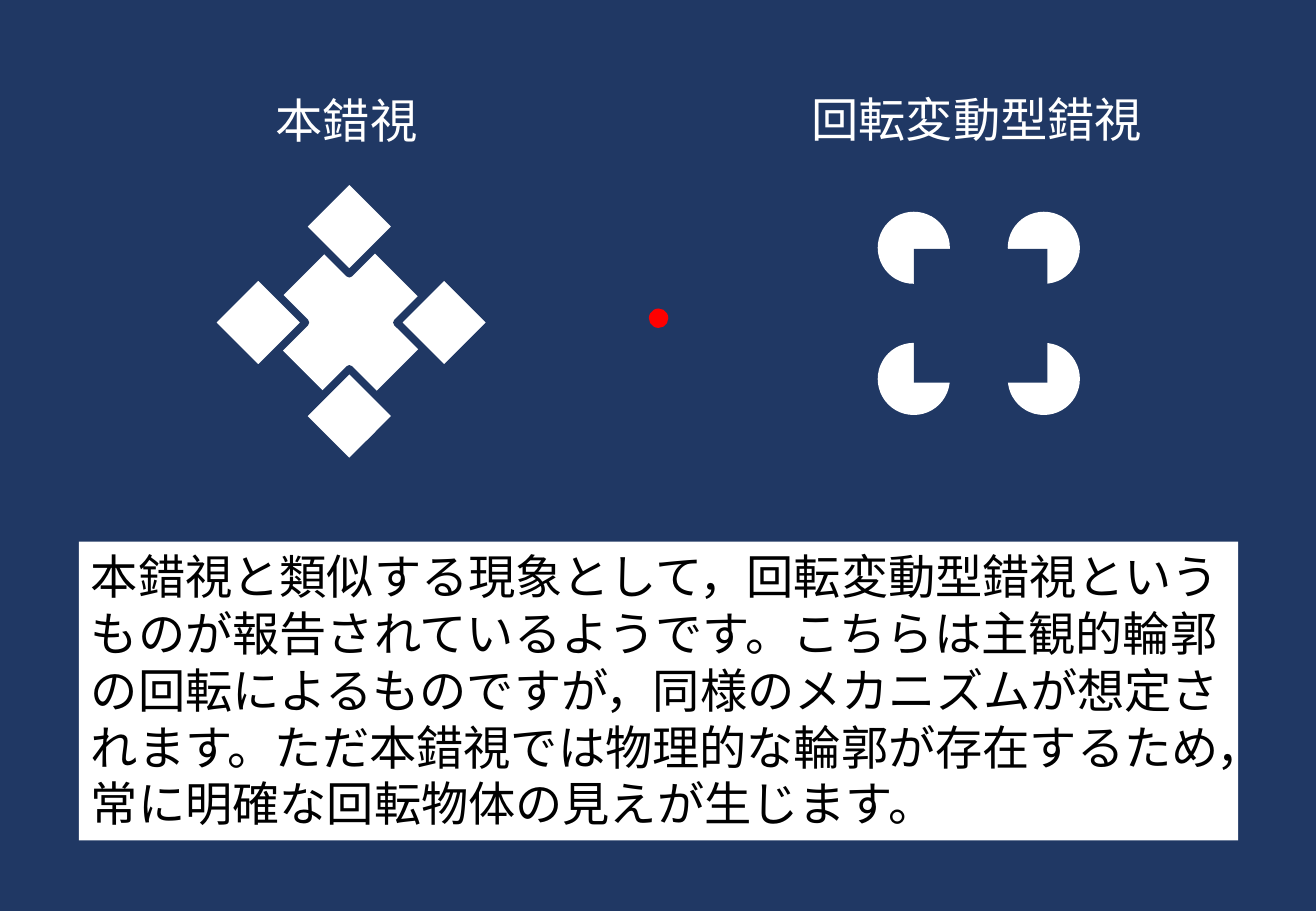
from itertools import product

from pptx import Presentation
from pptx.dml.color import RGBColor
from pptx.enum.shapes import MSO_SHAPE
from pptx.enum.text import MSO_ANCHOR, MSO_AUTO_SIZE, PP_ALIGN
from pptx.util import Pt

RECTANGLE, OVAL = MSO_SHAPE.RECTANGLE, MSO_SHAPE.OVAL
TOP, LEFT = MSO_ANCHOR.TOP, PP_ALIGN.LEFT
GROW = MSO_AUTO_SIZE.SHAPE_TO_FIT_TEXT

NAVY = RGBColor(0x20, 0x38, 0x64)
WHITE = RGBColor(0xFF, 0xFF, 0xFF)
BLACK = RGBColor(0x00, 0x00, 0x00)
RED = RGBColor(0xFF, 0x00, 0x00)

EMU_PER_PX = 9144
WIDTH, HEIGHT = 1083, 750
DIAMOND_SIZE, DISC_SIZE, SQUARE_SIZE = 55, 58, 110
DIAMOND_CORNERS = [(260, 159), (338, 238), (260, 315), (185, 238)]
DISC_LEFTS, DISC_TOPS = (723, 830), (175, 283)
EXPLANATION = (
    "本錯視と類似する現象として，回転変動型錯視というものが報告されているようです。"
    "こちらは主観的輪郭の回転によるものですが，同様のメカニズムが想定されます。"
    "ただ本錯視では物理的な輪郭が存在するため，常に明確な回転物体の見えが生じます。"
)


class SlidePainter:
    """Draws shapes and text on one slide in a shared style."""

    font_format = {"name": "Calibri", "size": Pt(28)}

    def __init__(self, slide):
        self.slide = slide

    def scale(self, *lengths):
        return [length * EMU_PER_PX for length in lengths]

    def shape(self, kind, left, top, width, height, fill, line=None, weight=0, rotation=0):
        shape = self.slide.shapes.add_shape(kind, *self.scale(left, top, width, height))
        shape.shadow.inherit = False
        shape.rotation = rotation
        shape.fill.solid()
        shape.fill.fore_color.rgb = fill
        if line is None:
            shape.line.fill.background()
        else:
            shape.line.color.rgb = line
            shape.line.width = Pt(weight)
        return shape

    def fill_text(self, box, text, color, wrap):
        frame = box.text_frame
        frame_format = {"word_wrap": wrap, "auto_size": GROW, "vertical_anchor": TOP}
        for name, value in frame_format.items():
            setattr(frame, name, value)
        para = frame.paragraphs[0]
        para.alignment = LEFT
        span = para.add_run()
        span.text = text
        for name, value in self.font_format.items():
            setattr(span.font, name, value)
        span.font.color.rgb = color

    def label(self, left, top, width, height, text):
        box = self.slide.shapes.add_textbox(*self.scale(left, top, width, height))
        self.fill_text(box, text, WHITE, False)

    def panel(self, left, top, width, height, text):
        box = self.shape(RECTANGLE, left, top, width, height, WHITE)
        self.fill_text(box, text, BLACK, True)


def main():
    deck = Presentation()
    deck.slide_width = WIDTH * EMU_PER_PX
    deck.slide_height = HEIGHT * EMU_PER_PX
    painter = SlidePainter(deck.slides.add_slide(deck.slide_layouts[6]))

    painter.shape(RECTANGLE, 0, 0, WIDTH, HEIGHT, NAVY)
    painter.panel(65, 446, 954, 246, EXPLANATION)
    painter.shape(OVAL, 534, 254, 16, 16, RED)

    painter.shape(RECTANGLE, 233, 211, SQUARE_SIZE, SQUARE_SIZE, WHITE, rotation=315)
    for left, top in DIAMOND_CORNERS:
        painter.shape(RECTANGLE, left, top, DIAMOND_SIZE, DIAMOND_SIZE, WHITE, NAVY, 4.5, 315)

    painter.label(217, 70, 138, 57, "本錯視")
    painter.label(658, 69, 295, 57, "回転変動型錯視")

    for top, left in product(DISC_TOPS, DISC_LEFTS):
        painter.shape(OVAL, left, top, DISC_SIZE, DISC_SIZE, WHITE, WHITE, 1)
    painter.shape(RECTANGLE, 752, 205, SQUARE_SIZE, SQUARE_SIZE, NAVY)

    deck.save("out.pptx")


if __name__ == "__main__":
    main()
